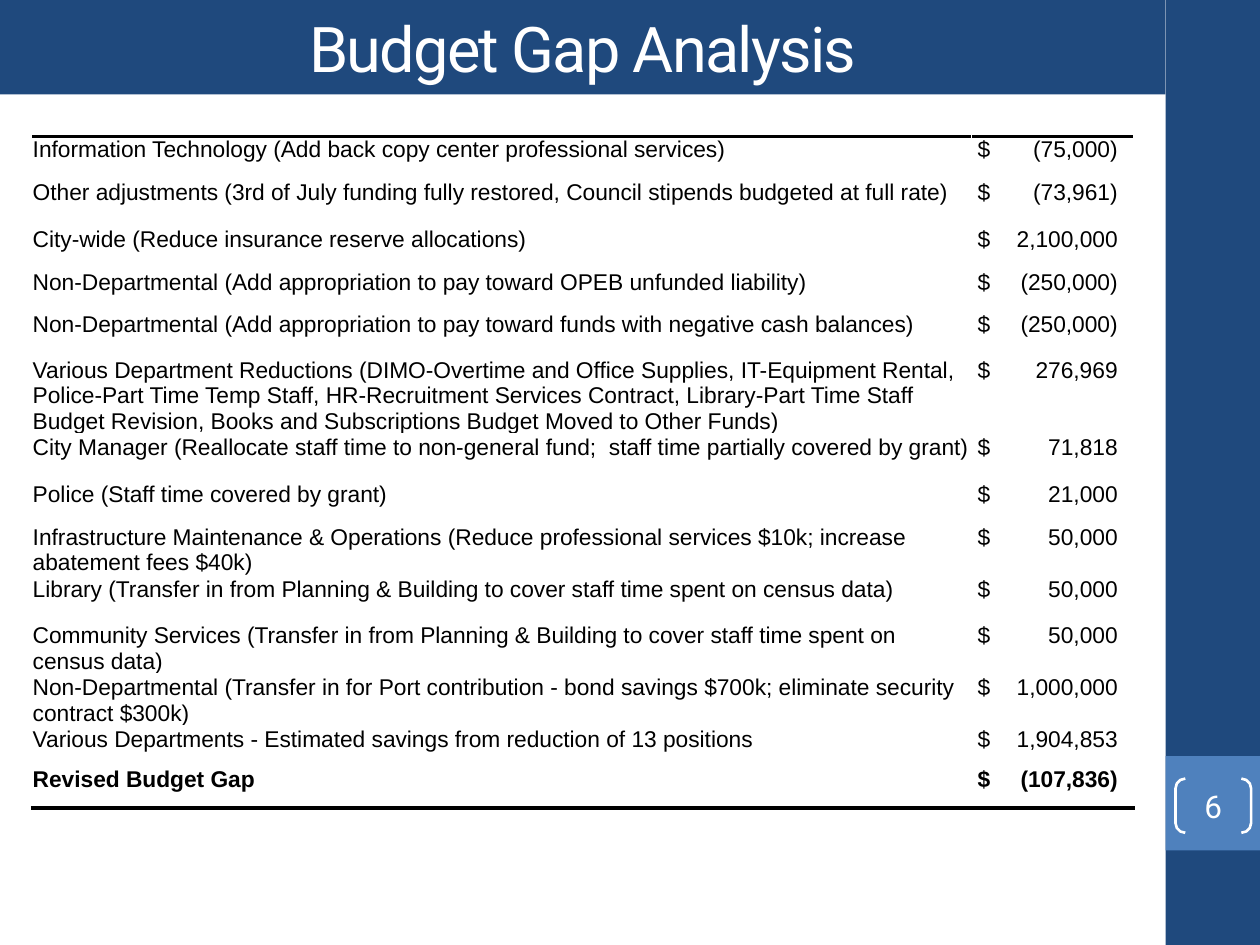
from dataclasses import dataclass

from lxml.etree import SubElement as Sub
from pptx import Presentation
from pptx.dml.color import RGBColor as Rgb
from pptx.enum.shapes import MSO_SHAPE as Shape
from pptx.enum.text import MSO_ANCHOR as Anchor, PP_ALIGN as Align
from pptx.oxml.ns import qn
from pptx.util import Inches, Pt


@dataclass(frozen=True)
class Theme:
    navy: str = "1F497D"
    blue: str = "4F81BD"
    white: str = "FFFFFF"
    black: str = "000000"
    head: str = "Roboto"
    body: str = "Arial"
    title: int = 36
    page: int = 18
    cell: int = 13
    rule: int = 2


class Deck:
    """Places elements on a grid of 40 columns and 30 rows."""

    def __init__(self, theme):
        self.theme = theme
        self.file = Presentation()
        self.file.slide_width, self.file.slide_height = Inches(10), Inches(7.5)
        self.unit = self.file.slide_width / 40
        self.slide = self.file.slides.add_slide(self.file.slide_layouts[6])

    def grid(self, *cells):
        return [round(n * self.unit) for n in cells]

    def font(self, para, name, size, color, bold=False):
        para.font.name, para.font.size, para.font.bold = name, Pt(size), bold
        para.font.color.rgb = Rgb.from_string(color)

    def shape(self, kind, box, fill=None, line=None):
        item = self.slide.shapes.add_shape(kind, *self.grid(*box))
        item.shadow.inherit = False
        if fill:
            item.fill.solid()
            item.fill.fore_color.rgb = Rgb.from_string(fill)
        else:
            item.fill.background()
        if line:
            item.line.color.rgb = Rgb.from_string(line)
            item.line.width = Pt(1.5)
        else:
            item.line.fill.background()
        return item

    def label(self, item, text, size, track=0):
        frame = item.text_frame
        frame.word_wrap = True
        frame.vertical_anchor = Anchor.MIDDLE
        frame.margin_left = frame.margin_right = 0
        frame.margin_top = frame.margin_bottom = 0
        para = frame.paragraphs[0]
        para.alignment = Align.CENTER
        run = para.add_run()
        run.text = text
        self.font(para, self.theme.head, size, self.theme.white)
        if track:
            run.font._element.set("spc", str(track * 100))

    def rule(self, cell, side):
        props = cell._tc.get_or_add_tcPr()
        line = Sub(props, qn(f"a:{side}"), w=str(Pt(self.theme.rule)))
        fill = Sub(line, qn("a:solidFill"))
        Sub(fill, qn("a:srgbClr"), val=self.theme.black)

    def cell(self, cell, text, left, bold, side):
        cell.text = text
        cell.margin_left = Inches(left)
        cell.margin_right = cell.margin_top = Inches(0.01)
        cell.margin_bottom = 0
        if side:
            self.rule(cell, side)
        cell.fill.solid()
        cell.fill.fore_color.rgb = Rgb.from_string(self.theme.white)
        para = cell.text_frame.paragraphs[0]
        self.font(para, self.theme.body, self.theme.cell, self.theme.black, bold)
        return para

    def table(self, box, widths, rows):
        frame = self.slide.shapes.add_table(len(rows), 2, *self.grid(*box))
        table = frame.table
        table.first_row = table.horz_banding = False
        for col, width in zip(table.columns, widths):
            col.width = Inches(width)
        last = len(rows) - 1
        for i, (high, name, sum_) in enumerate(rows):
            table.rows[i].height = Inches(high)
            side = {0: "lnT", last: "lnB"}.get(i)
            self.cell(table.cell(i, 0), name, 0.01, i == last, side)
            para = self.cell(table.cell(i, 1), f"$\t{sum_}", 0.05, i == last, side)
            # Amounts line up on a right tab
            props = para._p.get_or_add_pPr()
            tabs = props.makeelement(qn("a:tabLst"))
            Sub(tabs, qn("a:tab"), pos=str(Inches(1.11)), algn="r")
            props.insert(0, tabs)


ROWS = [
    (0.34, "Information Technology (Add back copy center professional services)", "(75,000)"),
    (0.37, "Other adjustments (3rd of July funding fully restored, "
           "Council stipends budgeted at full rate)", "(73,961)"),
    (0.34, "City-wide (Reduce insurance reserve allocations)", "2,100,000"),
    (0.34, "Non-Departmental (Add appropriation to pay toward OPEB unfunded liability)",
     "(250,000)"),
    (0.36, "Non-Departmental (Add appropriation to pay toward funds "
           "with negative cash balances)", "(250,000)"),
    (0.39, "Various Department Reductions (DIMO-Overtime and Office Supplies, "
           "IT-Equipment Rental, Police-Part Time Temp Staff, HR-Recruitment Services "
           "Contract, Library-Part Time Staff Budget Revision, Books and Subscriptions "
           "Budget Moved to Other Funds)", "276,969"),
    (0.37, "City Manager (Reallocate staff time to non-general fund;  "
           "staff time partially covered by grant)", "71,818"),
    (0.34, "Police (Staff time covered by grant)", "21,000"),
    (0.37, "Infrastructure Maintenance & Operations (Reduce professional services $10k; "
           "increase abatement fees $40k)", "50,000"),
    (0.37, "Library (Transfer in from Planning & Building to cover staff time "
           "spent on census data)", "50,000"),
    (0.37, "Community Services (Transfer in from Planning & Building to cover "
           "staff time spent on census data)", "50,000"),
    (0.37, "Non-Departmental (Transfer in for Port contribution - bond savings $700k; "
           "eliminate security contract $300k)", "1,000,000"),
    (0.31, "Various Departments - Estimated savings from reduction of 13 positions",
     "1,904,853"),
    (0.34, "Revised Budget Gap", "(107,836)"),
]


def main():
    look = Theme()
    deck = Deck(look)

    # Side band and page box
    deck.shape(Shape.RECTANGLE, (37, 0, 3, 30), look.navy)
    deck.shape(Shape.RECTANGLE, (37, 24, 3, 3), look.blue)

    # Title bar
    bar = deck.shape(Shape.RECTANGLE, (0, 0, 37, 3), look.navy)
    deck.label(bar, "Budget Gap Analysis", look.title, track=-1)

    # Page number
    page = deck.shape(Shape.DOUBLE_BRACKET, (37.32, 24.72, 2.4, 1.72), line=look.white)
    page.adjustments[0] = 0.18
    deck.label(page, "6", look.page)

    # Budget table
    deck.table((1, 4.32, 35, 22.24), (7.46, 1.29), ROWS)

    deck.file.save("out.pptx")


if __name__ == "__main__":
    main()
